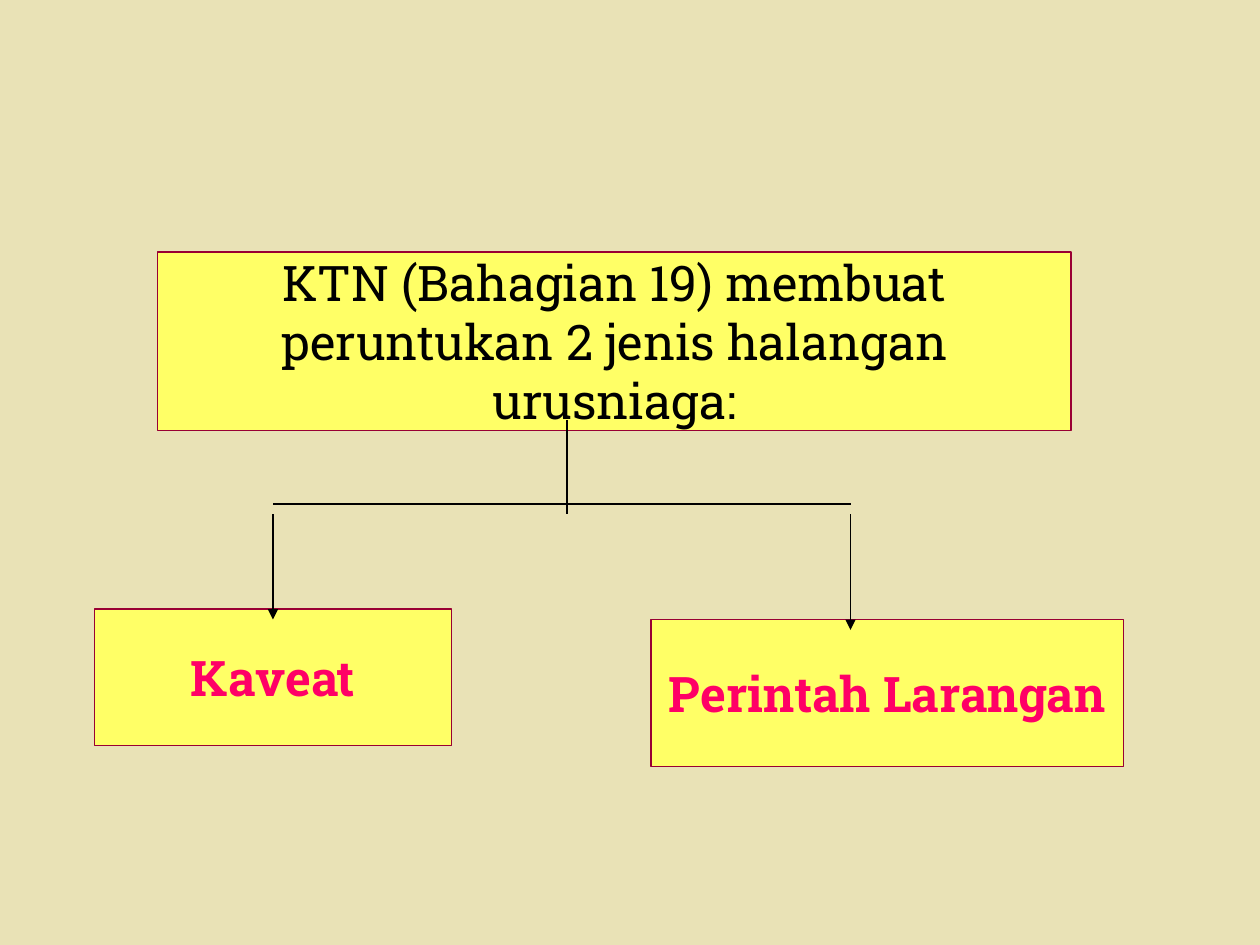
import pptx
import pptx.dml.color
import pptx.enum.shapes
import pptx.enum.text
import pptx.oxml.ns
import pptx.util
from lxml import etree

COLORS = {
    "background": "E9E2B6",
    "box": "FFFF66",
    "border": "990033",
    "text": "000000",
    "accent": "FF0066",
}
FONT = "Roboto Slab"
CELLS_PER_INCH = 12  # the slide is a grid of 120 columns and 90 rows


def cells(count):
    return pptx.util.Inches(count / CELLS_PER_INCH)


def color(name):
    return pptx.dml.color.RGBColor.from_string(COLORS[name])


def write_text(shape, text, size=28, color_name="text", bold=False, wrap=True):
    frame = shape.text_frame
    frame.word_wrap = wrap
    frame.vertical_anchor = pptx.enum.text.MSO_ANCHOR.MIDDLE
    paragraph = frame.paragraphs[0]
    paragraph.alignment = pptx.enum.text.PP_ALIGN.CENTER
    run = paragraph.add_run()
    run.text = text
    run.font.name = FONT
    run.font.size = pptx.util.Pt(size)
    run.font.bold = bold
    run.font.color.rgb = color(color_name)


def add_box(slide, column, row, columns, rows, text, **text_format):
    shape = slide.shapes.add_shape(
        pptx.enum.shapes.MSO_SHAPE.RECTANGLE,
        cells(column), cells(row), cells(columns), cells(rows))
    shape.shadow.inherit = False
    shape.fill.solid()
    shape.fill.fore_color.rgb = color("box")
    shape.line.color.rgb = color("border")
    shape.line.width = pptx.util.Pt(0.75)
    write_text(shape, text, **text_format)


def add_line(slide, start, end, arrow=False):
    connector = slide.shapes.add_connector(
        pptx.enum.shapes.MSO_CONNECTOR.STRAIGHT,
        *(cells(count) for count in start + end))
    connector.line.color.rgb = color("text")
    connector.line.width = pptx.util.Pt(0.75)
    if arrow:
        etree.SubElement(connector.line._get_or_add_ln(),
                         pptx.oxml.ns.qn("a:tailEnd"), type="triangle")
    etree.SubElement(connector._element.spPr, pptx.oxml.ns.qn("a:effectLst"))


def main():
    presentation = pptx.Presentation()
    presentation.slide_width = cells(120)
    presentation.slide_height = cells(90)
    slide = presentation.slides.add_slide(presentation.slide_layouts[6])
    slide.background.fill.solid()
    slide.background.fill.fore_color.rgb = color("background")

    # Statement and its two kinds of restraint
    add_box(slide, 15, 24, 87, 17,
            "KTN (Bahagian 19) membuat peruntukan 2 jenis halangan urusniaga:")
    kind_format = {"color_name": "accent", "bold": True, "wrap": False}
    add_box(slide, 9, 58, 34, 13, "Kaveat", **kind_format)
    add_box(slide, 62, 59, 45, 14, "Perintah Larangan", **kind_format)

    # Trunk and the two halves of the crossbar
    trunk, left, right, crossbar = 54, 26, 81, 48
    add_line(slide, (trunk, 40), (trunk, crossbar + 1))
    add_line(slide, (trunk - 1, crossbar), (right, crossbar))
    add_line(slide, (trunk, crossbar), (left, crossbar))

    # Arrows down to the kinds
    for column, tip in ((left, 59), (right, 60)):
        add_line(slide, (column, crossbar + 1), (column, tip), arrow=True)

    presentation.save("out.pptx")


if __name__ == "__main__":
    main()
